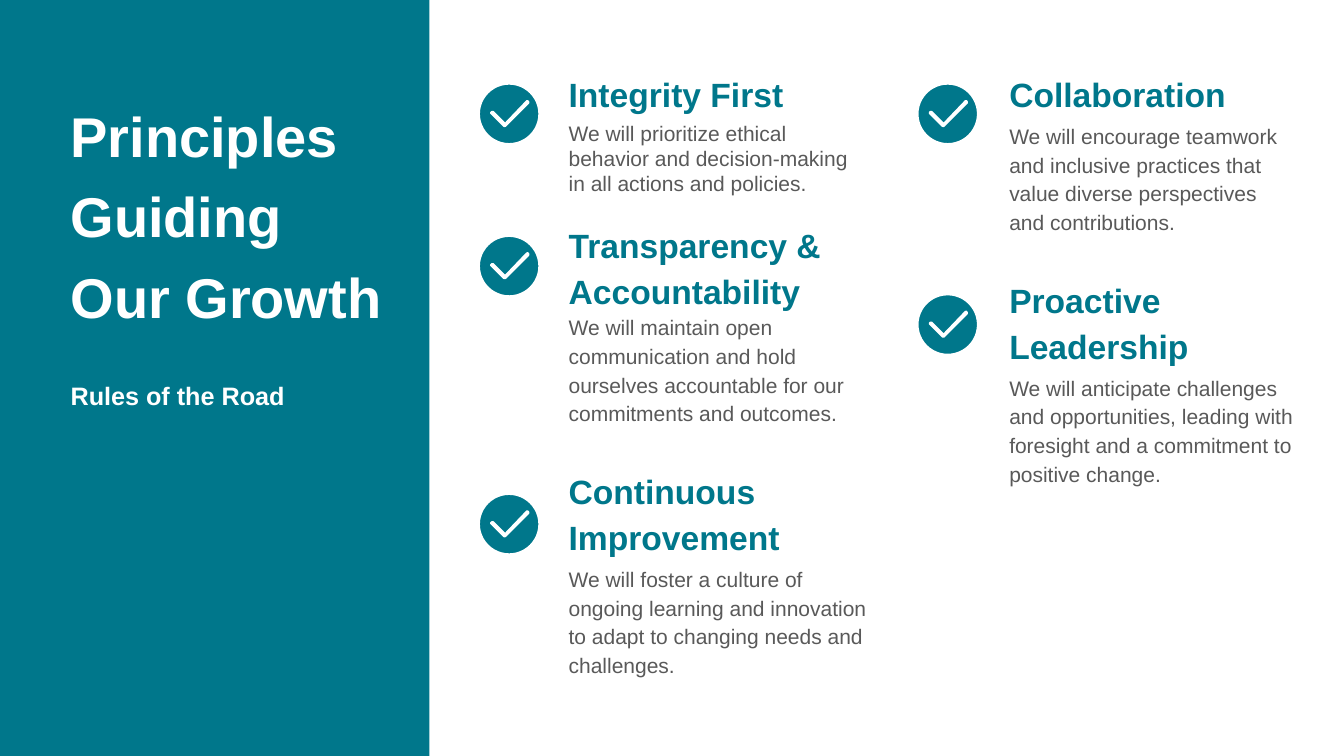
from pptx import Presentation
from pptx.dml.color import RGBColor
from pptx.enum.shapes import MSO_SHAPE
from pptx.enum.text import MSO_ANCHOR, MSO_AUTO_SIZE, PP_ALIGN
from pptx.util import Inches, Pt

TEAL = RGBColor(0x00, 0x77, 0x8B)
WHITE = RGBColor(0xFF, 0xFF, 0xFF)
GRAY = RGBColor(0x59, 0x59, 0x59)

# Check mark outline in hundredths of an inch from the corner of its circle
CHECK_POINTS = [(49, 18), (48, 17), (26, 40), (14, 28), (13, 28),
                (12, 29), (13, 30), (25, 42), (26, 42), (49, 19)]

# Each principle: heading, space after it, body, body line spacing, space after it
LEFT_PRINCIPLES = [
    ("Integrity First", 4,
     "We will prioritize ethical behavior and decision-making in all actions and policies.",
     1.0, 17),
    ("Transparency & Accountability", 0,
     "We will maintain open communication and hold ourselves accountable for our "
     "commitments and outcomes.", 1.14, 28),
    ("Continuous Improvement", 4,
     "We will foster a culture of ongoing learning and innovation to adapt to "
     "changing needs and challenges.", 1.14, 28),
]
RIGHT_PRINCIPLES = [
    ("Collaboration", 4,
     "We will encourage teamwork and inclusive practices that value diverse "
     "perspectives and contributions.", 1.14, 28),
    ("Proactive Leadership", 4,
     "We will anticipate challenges and opportunities, leading with foresight and "
     "a commitment to positive change.", 1.14, 28),
]


def place(shape, left, top, width, height):
    shape.left, shape.top = Inches(left), Inches(top)
    shape.width, shape.height = Inches(width), Inches(height)


def prepare_frame(frame, inset):
    frame.word_wrap = True
    frame.auto_size = MSO_AUTO_SIZE.NONE
    frame.vertical_anchor = MSO_ANCHOR.TOP
    frame.margin_left = frame.margin_right = Inches(inset)
    frame.margin_top = frame.margin_bottom = Inches(inset)


def write_paragraph(paragraph, text, size, color, bold, line_spacing, space_after):
    paragraph.text = text
    paragraph.alignment = PP_ALIGN.LEFT
    paragraph.line_spacing = line_spacing
    paragraph.space_before = Pt(0)
    paragraph.space_after = Pt(space_after)
    font = paragraph.font
    font.name, font.size, font.bold = "Arial", Pt(size), bold
    font.color.rgb = color


def paint(shape, line_color=None):
    shape.shadow.inherit = False
    shape.fill.solid()
    shape.fill.fore_color.rgb = TEAL
    if line_color is None:
        shape.line.fill.background()
    else:
        shape.line.color.rgb = line_color
        shape.line.width = Pt(1.5)


def add_title_panel(slide):
    title = slide.shapes.title
    panel = slide.shapes.add_shape(
        MSO_SHAPE.RECTANGLE, 0, 0, Inches(4.26), Inches(7.5))
    paint(panel)
    title.element.addprevious(panel.element)  # keep the panel behind the title

    place(title, 0.67, 0.84, 3.2, 3.26)
    frame = title.text_frame
    prepare_frame(frame, 0.03)
    write_paragraph(frame.paragraphs[0], "Principles Guiding Our Growth",
                    40, WHITE, True, 1.2, 32)
    write_paragraph(frame.add_paragraph(), "Rules of the Road",
                    18, WHITE, True, 1.2, 32)


def add_check_badge(slide, left, top):
    badge = slide.shapes.add_group_shape()
    circle = badge.shapes.add_shape(
        MSO_SHAPE.OVAL, Inches(left), Inches(top), Inches(0.6), Inches(0.6))
    paint(circle, WHITE)
    builder = badge.shapes.build_freeform(*CHECK_POINTS[0], scale=Inches(0.01))
    builder.add_line_segments(CHECK_POINTS[1:], close=True)
    paint(builder.convert_to_shape(Inches(left), Inches(top)), WHITE)


def add_principles(slide, principles, left, width, height):
    box = slide.shapes.add_textbox(
        Inches(left), Inches(0.68), Inches(width), Inches(height))
    frame = box.text_frame
    prepare_frame(frame, 0)
    for index, (heading, gap, body, spacing, space_after) in enumerate(principles):
        paragraph = frame.add_paragraph() if index else frame.paragraphs[0]
        write_paragraph(paragraph, heading, 24, TEAL, True, 1.14, gap)
        write_paragraph(frame.add_paragraph(), body, 15, GRAY, False,
                        spacing, space_after)


def main():
    presentation = Presentation()
    presentation.slide_width = Inches(13.33)
    presentation.slide_height = Inches(7.5)
    slide = presentation.slides.add_slide(presentation.slide_layouts[5])

    # Left panel with the title
    add_title_panel(slide)

    # Two columns of principles
    add_principles(slide, LEFT_PRINCIPLES, 5.64, 2.97, 6.83)
    add_principles(slide, RIGHT_PRINCIPLES, 10.01, 2.82, 5.02)

    # One check badge beside each heading
    for left, tops in ((4.75, (0.83, 2.34, 4.9)), (9.1, (0.83, 2.92))):
        for top in tops:
            add_check_badge(slide, left, top)

    presentation.save("out.pptx")


if __name__ == "__main__":
    main()
